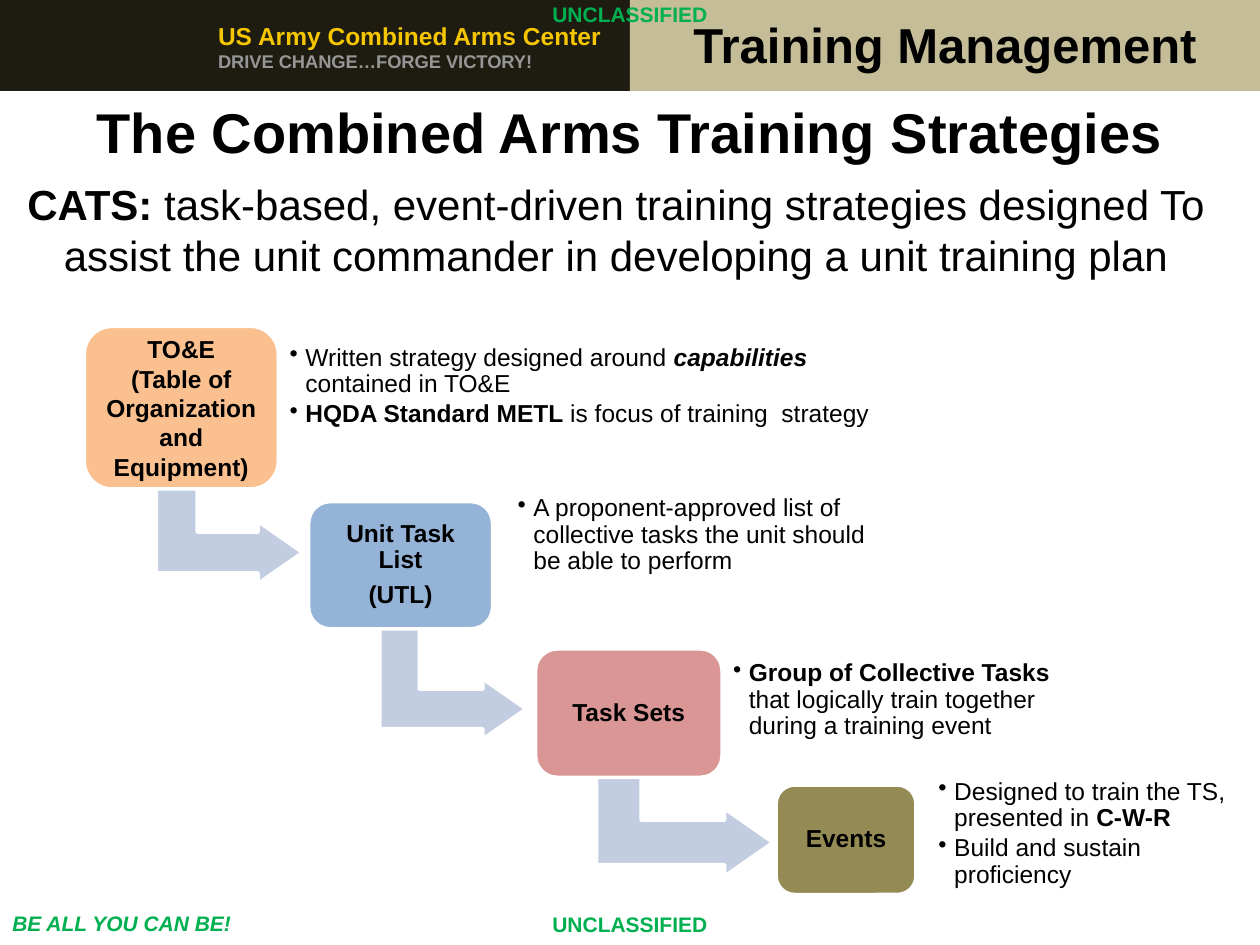
from lxml import etree
from pptx import Presentation
from pptx.dml.color import RGBColor
from pptx.enum import shapes, text
from pptx.oxml import ns
from pptx.util import Pt

FONT = "Arial"
GREEN = "00B050"
CENTER, LEFT = text.PP_ALIGN.CENTER, text.PP_ALIGN.LEFT
MIDDLE, TOP = text.MSO_ANCHOR.MIDDLE, text.MSO_ANCHOR.TOP


def color(hex_value):
    return RGBColor.from_string(hex_value)


def write(shape, paragraphs, size=14, fill="000000", bold=False, italic=False,
          align=CENTER, anchor=MIDDLE, inset=(7.2, 3.6), line=None, after=0,
          indent=None, bullet=False):
    """Fill a shape with paragraphs, each a list of (text, format overrides)."""
    frame = shape.text_frame
    frame.word_wrap = True
    frame.auto_size = text.MSO_AUTO_SIZE.NONE
    frame.vertical_anchor = anchor
    frame.margin_left = frame.margin_right = Pt(inset[0])
    frame.margin_top = frame.margin_bottom = Pt(inset[1])
    for index, runs in enumerate(paragraphs):
        paragraph = frame.paragraphs[0] if index == 0 else frame.add_paragraph()
        paragraph.alignment = align
        paragraph.space_before = Pt(0)
        paragraph.space_after = Pt(after)
        if line:
            paragraph.line_spacing = line
        properties = paragraph._p.get_or_add_pPr()
        if indent:
            properties.set("marL", str(Pt(indent[0])))
            properties.set("indent", str(Pt(indent[1])))
        if bullet:
            etree.SubElement(properties, ns.qn("a:buChar"), char="•")
        for words, changes in runs:
            style = {"size": size, "fill": fill, "bold": bold, "italic": italic, **changes}
            run = paragraph.add_run()
            run.text = words
            run.font.name = FONT
            run.font.size = Pt(style["size"])
            run.font.bold = style["bold"]
            run.font.italic = style["italic"]
            run.font.color.rgb = color(style["fill"])


presentation = Presentation()
presentation.slide_width, presentation.slide_height = Pt(720), Pt(540)
slide = presentation.slides.add_slide(presentation.slide_layouts[5])
BOLD = {"bold": True}

# Header bands
for left, fill in ((0, "1E1C11"), (360, "C4BD97")):
    band = slide.shapes.add_shape(shapes.MSO_SHAPE.RECTANGLE, Pt(left), Pt(0), Pt(360), Pt(52))
    band.shadow.inherit = False
    band.fill.solid()
    band.fill.fore_color.rgb = color(fill)
    band.line.fill.background()

# Title
title = slide.shapes.title
title.left, title.top, title.width, title.height = Pt(0), Pt(52), Pt(720), Pt(46)
write(title, [[("The Combined Arms Training Strategies", {})]], size=32, bold=True)

# Header, footer and definition: position, paragraphs, format
marking = dict(size=12, fill=GREEN, bold=True)
labels = [
    ((0, 517, 168.5, 21.6), [[("BE ALL YOU CAN BE!", {})]],
     dict(marking, italic=True, align=LEFT, anchor=TOP)),
    ((81.4, 1.4, 271.4, 50.4),
     [[("US Army Combined Arms Center", {})],
      [("DRIVE CHANGE…FORGE VICTORY!", {"size": 10.5, "fill": "969696"})]],
     dict(fill="F6C700", bold=True, align=LEFT, inset=(2.9, 1.4), indent=(25.2, 15.1))),
    ((306, 0.7, 108, 14.4), [[("UNCLASSIFIED", {})]], marking),
    ((306, 520.6, 108, 14.4), [[("UNCLASSIFIED", {})]], marking),
    ((360, 0, 360, 50.4), [[("Training Management", {})]],
     dict(size=28, bold=True, inset=(1.4, 1.4))),
    ((-8, 98.6, 720, 65.5),
     [[("CATS: ", BOLD),
       ("task-based, event-driven training strategies designed To "
        "assist the unit commander in developing a unit training plan", {})]],
     dict(size=24, anchor=TOP)),
]
for place, paragraphs, style in labels:
    label = slide.shapes.add_textbox(*map(Pt, place))
    write(label, paragraphs, **style)

# Staircase: box, fill, name, name spacing, notes place, notes, arrow to the next step
spaced = dict(line=0.9, after=5)
steps = [
    ((48.2, 186.5, 110.9, 92.9), "FAC090",
     ["TO&E", "(Table of Organization and Equipment)"], {},
     (161.3, 186.5, 339.8, 69.1),
     [[("Written strategy designed around ", {}),
       ("capabilities", {"bold": True, "italic": True}),
       (" contained in TO&E", {})],
      [("HQDA Standard METL ", BOLD), ("is focus of training  strategy", {})]],
     (95.8, 256.3, 70.6, 83.5)),
    ((176.4, 286.6, 105.1, 72.7), "95B3D7", ["Unit Task List", "(UTL)"], spaced,
     (291.6, 283.7, 209.5, 44.6),
     [[("A proponent-approved list of collective tasks the unit should be able to perform", {})]],
     (224.6, 346.3, 68.4, 83.5)),
    ((306, 370.8, 106.6, 73.4), "D99694", ["Task Sets"], spaced,
     (414.7, 378, 213.1, 44.6),
     [[("Group of Collective Tasks ", BOLD),
       ("that logically train together during a training event", {})]],
     (352.8, 411.8, 77, 100.8)),
    ((443.5, 448.6, 79.9, 62.6), "948A54", ["Events"], spaced,
     (532.1, 454.3, 180, 44.6),
     [[("Designed to train the TS, presented in ", {}), ("C-W-R", BOLD)],
      [("Build and sustain proficiency", {})]],
     None),
]
for box_place, fill, name, spacing, notes_place, notes, arrow_place in steps:
    outlined = []
    if arrow_place:
        arrow = slide.shapes.add_shape(shapes.MSO_SHAPE.BENT_UP_ARROW, *map(Pt, arrow_place))
        arrow.rotation = 90
        for index, value in enumerate((0.33, 0.25, 0.36)):
            arrow.adjustments[index] = value
        outlined.append((arrow, "C2CDE1"))
    box = slide.shapes.add_shape(shapes.MSO_SHAPE.ROUNDED_RECTANGLE, *map(Pt, box_place))
    box.adjustments[0] = 0.17
    outlined.append((box, fill))
    for shape, shape_fill in outlined:
        shape.shadow.inherit = False
        shape.fill.solid()
        shape.fill.fore_color.rgb = color(shape_fill)
        shape.line.color.rgb = color("FFFFFF")
        shape.line.width = Pt(2)
    write(box, [[(words, {})] for words in name], bold=True, inset=(4.2, 4.2), **spacing)
    notes_box = slide.shapes.add_textbox(*map(Pt, notes_place))
    write(notes_box, notes, align=LEFT, inset=(4.2, 4.2), line=0.9, after=2,
          indent=(9, -9), bullet=True)

presentation.save("out.pptx")
